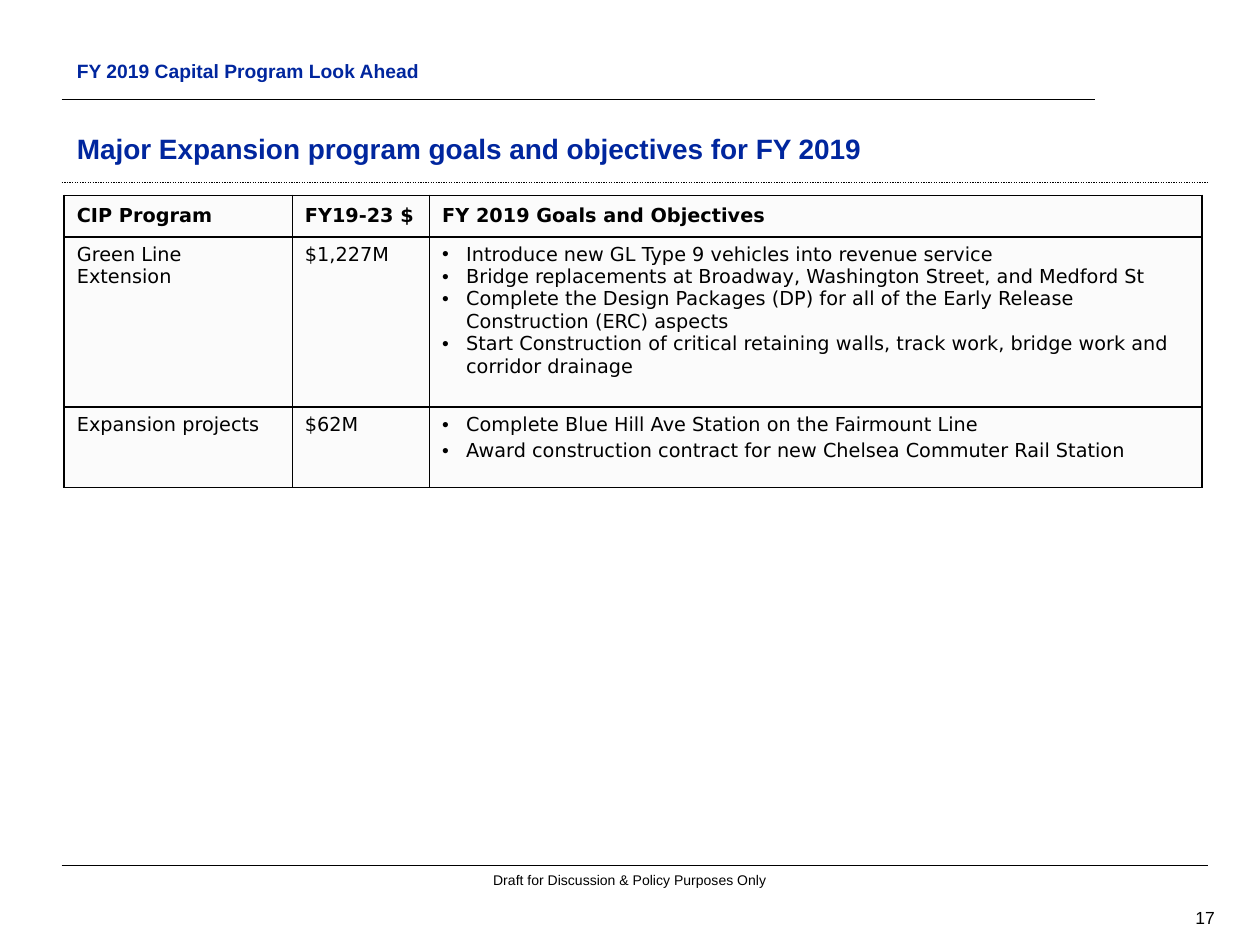
"""Build the capital program slide with its goals table."""
from lxml.etree import SubElement
from pptx import Presentation
from pptx.dml.color import RGBColor
from pptx.enum.dml import MSO_LINE
from pptx.enum.shapes import MSO_CONNECTOR
from pptx.enum.text import MSO_ANCHOR, MSO_AUTO_SIZE, PP_ALIGN
from pptx.oxml import parse_xml
from pptx.oxml.ns import nsdecls, qn
from pptx.util import Inches, Pt

deck = Presentation()
deck.slide_width, deck.slide_height = Inches(10), Inches(7.5)
slide = deck.slides.add_slide(deck.slide_layouts[1])
col, row = deck.slide_width / 100, deck.slide_height / 75


def grid(x, y, w, h):
    """Turn columns and rows into lengths."""
    return round(x * col), round(y * row), round(w * col), round(h * row)


def style(part, size, face, tint, bold=False):
    """Set the font of each run in a paragraph."""
    for run in part.runs:
        run.font.size, run.font.name, run.font.bold = Pt(size), face, bold
        run.font.color.rgb = RGBColor.from_string(tint)


rules = [
    (14.5, 91, 0.75, MSO_LINE.ROUND_DOT),
    (68.7, 91, 0.75, MSO_LINE.SOLID),
    (7.9, 82, 1, MSO_LINE.SOLID),
]
for top, wide, weight, dash in rules:
    x, y, w, h = grid(4.9, top, wide, 0)
    rule = slide.shapes.add_connector(MSO_CONNECTOR.STRAIGHT, x, y, x + w, y)
    rule.line.width, rule.line.dash_style = Pt(weight), dash
    rule.line.color.rgb = RGBColor.from_string("000000")
    SubElement(rule.element.spPr, qn("a:effectLst"))

title, body = slide.shapes.title, slide.placeholders[1]
heads = [
    (title, "Major Expansion program goals and objectives for FY 2019",
     (5.1, 8.5, 84.8, 5.1), 16, MSO_ANCHOR.BOTTOM),
    (body, "FY 2019 Capital Program Look Ahead",
     (5.1, 4.2, 79.9, 2.5), 11, MSO_ANCHOR.TOP),
]
for head, text, place, size, anchor in heads:
    head.left, head.top, head.width, head.height = grid(*place)
    frame = head.text_frame
    frame.text, frame.vertical_anchor = text, anchor
    frame.auto_size = MSO_AUTO_SIZE.NONE
    part = frame.paragraphs[0]
    props = part._p.get_or_add_pPr()
    props.set("marL", "0")
    props.set("indent", "0")
    SubElement(props, qn("a:buNone"))
    part.alignment, part.space_before = PP_ALIGN.LEFT, Pt(0)
    style(part, size, "Arial", "00269E", True)

notes = [
    ("Draft for Discussion & Policy Purposes Only",
     (35.7, 68.7, 28.6, 2.4), 8, PP_ALIGN.CENTER, MSO_ANCHOR.TOP),
    ("17", (89.1, 71.6, 8.3, 2.5), 10, PP_ALIGN.RIGHT, MSO_ANCHOR.MIDDLE),
]
for text, place, size, align, anchor in notes:
    frame = slide.shapes.add_textbox(*grid(*place)).text_frame
    frame.text, frame.word_wrap, frame.vertical_anchor = text, True, anchor
    frame.paragraphs[0].alignment = align
    style(frame.paragraphs[0], size, "Arial", "000000")

data = [
    ["CIP Program", "FY19-23 $", "FY 2019 Goals and Objectives"],
    ["Green Line Extension", "$1,227M", [
        "Introduce new GL Type 9 vehicles into revenue service",
        "Bridge replacements at Broadway, Washington Street, and Medford St",
        "Complete the Design Packages (DP) for all of the Early Release "
        "Construction (ERC) aspects",
        "Start Construction of critical retaining walls, track work, "
        "bridge work and corridor drainage"]],
    ["Expansion projects", "$62M", [
        "Complete Blue Hill Ave Station on the Fairmount Line",
        "Award construction contract for new Chelsea Commuter Rail Station"]],
]
wides, talls = [18.1, 10.9, 61.3], [3.3, 13.5, 6.4]
place = grid(5.1, 15.5, sum(wides), sum(talls))
table = slide.shapes.add_table(len(talls), len(wides), *place).table
table.first_row = table.horz_banding = False
for item, wide in zip(table.columns, wides):
    item.width = round(wide * col)
for item, tall in zip(table.rows, talls):
    item.height = round(tall * row)

for r, line in enumerate(data):
    for c, entry in enumerate(line):
        cell = table.cell(r, c)
        goals = isinstance(entry, list)
        cell.text_frame.text = "\n".join(entry) if goals else entry
        cell.vertical_anchor = MSO_ANCHOR.TOP if r else MSO_ANCHOR.MIDDLE
        for part in cell.text_frame.paragraphs:
            if goals:
                props = part._p.get_or_add_pPr()
                props.set("marL", str(Inches(0.19)))
                props.set("indent", str(-Inches(0.19)))
                SubElement(props, qn("a:buFont")).set("typeface", "Arial")
                SubElement(props, qn("a:buChar")).set("char", "•")
                part.space_after = Pt(2 if r == 2 else 0)
            style(part, 11, "DejaVu Sans", "000000", r == 0)
        edges = cell._tc.get_or_add_tcPr()
        for side in "LRTB":
            edges.append(parse_xml(
                f'<a:ln{side} {nsdecls("a")} w="{Pt(1)}"><a:solidFill>'
                f'<a:srgbClr val="000000"/></a:solidFill></a:ln{side}>'))
        cell.fill.solid()
        cell.fill.fore_color.rgb = RGBColor.from_string("D9D9D9")
        shade = edges.find(qn("a:solidFill")).find(qn("a:srgbClr"))
        SubElement(shade, qn("a:alpha")).set("val", "10000")

deck.save("out.pptx")
